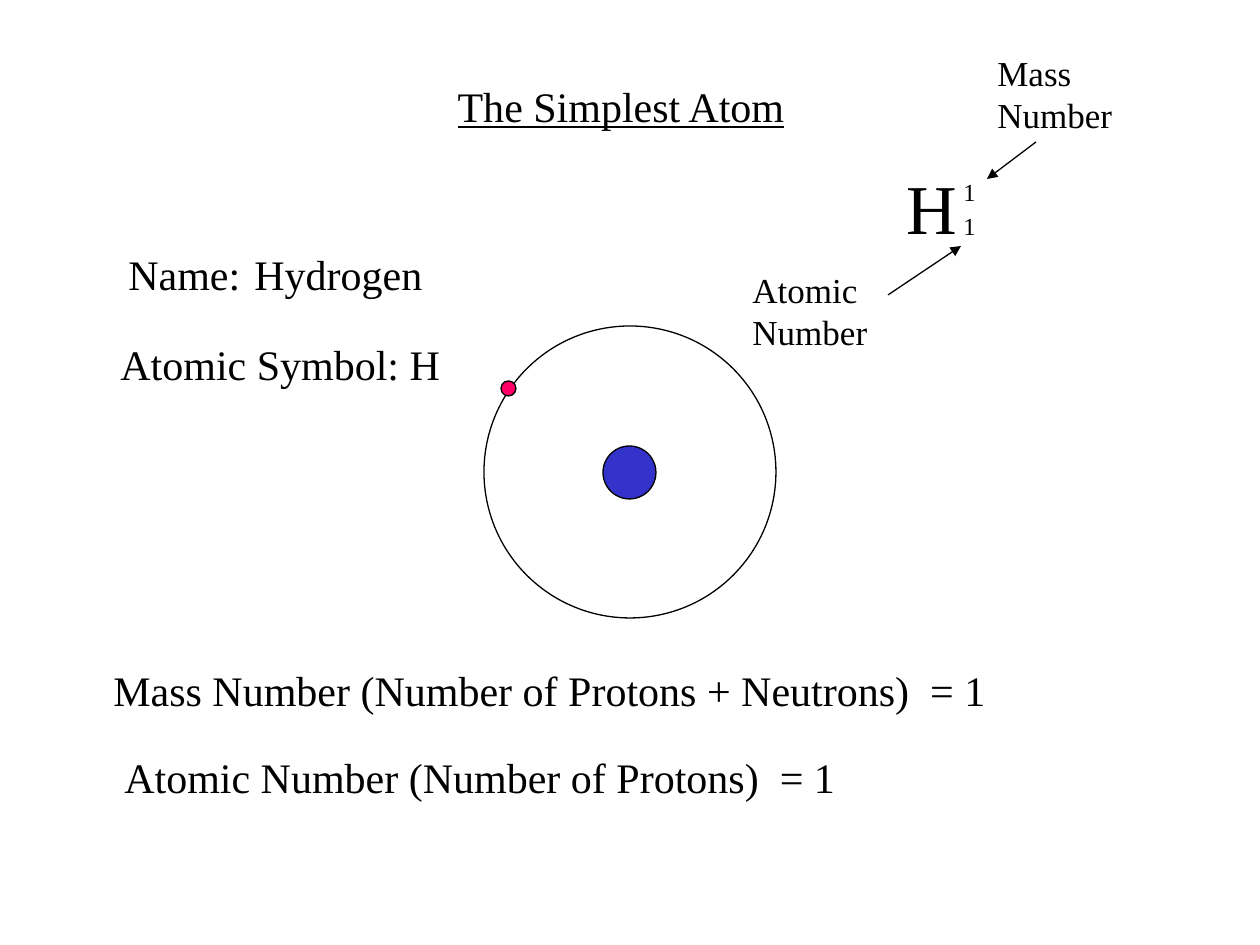
"""Build a slide about the hydrogen atom, its symbol and its numbers."""
import dataclasses
import typing

import pptx
import pptx.dml.color
import pptx.enum.shapes
import pptx.enum.text
import pptx.oxml
import pptx.oxml.ns
import pptx.util

PIXEL = 914400 / 126
FONT = "Times New Roman"
COLORS = {"ink": "000000", "nucleus": "3333CC", "electron": "FF0066"}


@dataclasses.dataclass
class Label:
    text: str
    left: int
    top: int
    width: int
    height: int = 63
    size: int = 24
    wrap: bool = True
    underline: bool = False


@dataclasses.dataclass
class Circle:
    left: int
    top: int
    diameter: int
    fill: typing.Optional[str] = None


@dataclasses.dataclass
class Arrow:
    start: typing.Tuple[int, int]
    end: typing.Tuple[int, int]


TITLE = Label("The Simplest Atom", 445, 74, 370, underline=True)
NUCLEUS = Circle(603, 446, 53, "nucleus")
ORBIT = [Circle(484, 326, 292), Circle(501, 381, 15, "electron")]
FACTS = [
    Label("Name: \tHydrogen", 116, 242, 358),
    Label("Atomic Symbol: H", 108, 332, 345, wrap=False),
    Label("Atomic Number (Number of Protons)  = 1", 112, 745, 858),
    Label("Mass Number (Number of Protons + Neutrons)  = 1", 101, 658, 905),
]
NOTATION = [
    Label("H", 894, 158, 81, 97, size=40),
    Label("1", 951, 171, 35, 42, size=14),
    Label("1", 951, 205, 38, 42, size=14, wrap=False),
    Arrow((888, 295), (961, 246)),
    Label("Atomic Number", 740, 262, 143, 97, size=20),
    Label("Mass Number", 985, 45, 165, 97, size=20),
    Arrow((1036, 142), (987, 179)),
]


def px(length: int) -> int:
    return round(length * PIXEL)


def color(name: str) -> pptx.dml.color.RGBColor:
    return pptx.dml.color.RGBColor.from_string(COLORS[name])


def set_line(line: typing.Any) -> None:
    line.color.rgb = color("ink")
    line.width = pptx.util.Pt(0.75)


def write_label(box: typing.Any, label: Label) -> None:
    box.left, box.top = px(label.left), px(label.top)
    box.width, box.height = px(label.width), px(label.height)
    frame = box.text_frame
    frame.word_wrap = label.wrap
    frame.auto_size = pptx.enum.text.MSO_AUTO_SIZE.SHAPE_TO_FIT_TEXT
    frame.vertical_anchor = pptx.enum.text.MSO_ANCHOR.TOP
    para = frame.paragraphs[0]
    para.alignment = pptx.enum.text.PP_ALIGN.LEFT
    span = para.add_run()
    span.text = label.text
    span.font.name = FONT
    span.font.size = pptx.util.Pt(label.size)
    span.font.underline = label.underline
    span.font.color.rgb = color("ink")


def draw_label(shapes: typing.Any, label: Label) -> None:
    write_label(shapes.add_textbox(0, 0, 0, 0), label)


def draw_circle(shapes: typing.Any, circle: Circle) -> None:
    diameter = px(circle.diameter)
    shape = shapes.add_shape(
        pptx.enum.shapes.MSO_SHAPE.OVAL, px(circle.left), px(circle.top), diameter, diameter
    )
    shape.shadow.inherit = False
    set_line(shape.line)
    if circle.fill:
        shape.fill.solid()
        shape.fill.fore_color.rgb = color(circle.fill)
    else:
        shape.fill.background()


def draw_arrow(shapes: typing.Any, arrow: Arrow) -> None:
    connector = shapes.add_connector(
        pptx.enum.shapes.MSO_CONNECTOR.STRAIGHT, *map(px, arrow.start + arrow.end)
    )
    set_line(connector.line)
    head = pptx.oxml.parse_xml(f'<a:tailEnd {pptx.oxml.ns.nsdecls("a")} type="triangle"/>')
    connector.line._get_or_add_ln().append(head)
    effects = pptx.oxml.parse_xml(f'<a:effectLst {pptx.oxml.ns.nsdecls("a")}/>')
    connector._element.spPr.append(effects)


def draw_all(shapes: typing.Any, items: typing.Sequence[typing.Any]) -> None:
    painters = {Label: draw_label, Circle: draw_circle, Arrow: draw_arrow}
    for item in items:
        painters[type(item)](shapes, item)


def main() -> None:
    deck = pptx.Presentation()
    deck.slide_width, deck.slide_height = px(1260), px(945)
    page = deck.slides.add_slide(deck.slide_layouts[5])
    write_label(page.shapes.title, TITLE)
    draw_circle(page.shapes, NUCLEUS)
    draw_all(page.shapes.add_group_shape().shapes, ORBIT)
    draw_all(page.shapes, FACTS)
    draw_all(page.shapes.add_group_shape().shapes, NOTATION)
    deck.save("out.pptx")


if __name__ == "__main__":
    main()
